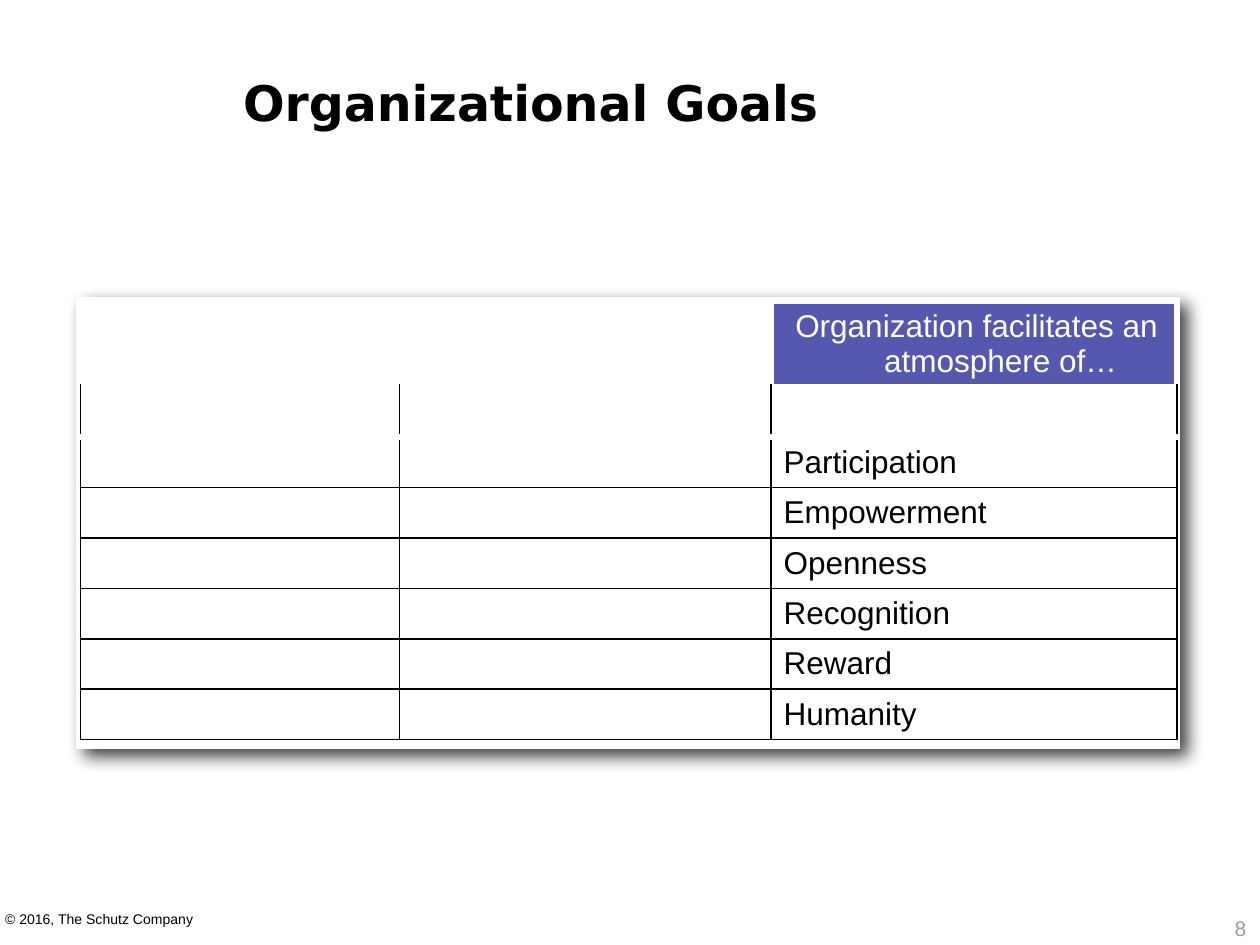
from dataclasses import dataclass

from lxml import etree
from pptx import Presentation
from pptx.dml.color import RGBColor
from pptx.enum.shapes import MSO_SHAPE
from pptx.enum.text import MSO_ANCHOR, MSO_AUTO_SIZE, PP_ALIGN
from pptx.oxml.ns import qn
from pptx.util import Inches, Pt

LEFT, CENTER = PP_ALIGN.LEFT, PP_ALIGN.CENTER
TOP, MIDDLE = MSO_ANCHOR.TOP, MSO_ANCHOR.MIDDLE
NO_AUTOFIT = MSO_AUTO_SIZE.NONE
RECTANGLE = MSO_SHAPE.RECTANGLE
TITLE_ONLY = 5


@dataclass(frozen=True)
class Theme:
    black: str = "000000"
    white: str = "FFFFFF"
    header: str = "5657AE"
    gray: str = "9B9B9B"
    body_font: str = "Arial"
    title_font: str = "DejaVu Sans"
    title_size: int = 28
    table_size: int = 18
    number_size: int = 12
    footer_size: int = 8
    inset: float = 0.06
    indent: float = 0.04
    grid_width: float = 1
    gap_width: float = 4


THEME = Theme()
HEADER = "Organization facilitates an atmosphere of…"
GOALS = ["Participation", "Empowerment", "Openness", "Recognition", "Reward", "Humanity"]
COLUMN_WIDTHS = [2.53, 2.95, 3.22]
HEADER_HEIGHT, ROW_HEIGHT = 0.63, 0.37


def color(value):
    return RGBColor.from_string(value)


def set_indent(para, left, first=0.0):
    properties = para._p.get_or_add_pPr()
    properties.set("marL", str(Inches(left)))
    properties.set("indent", str(Inches(first)))


def style_para(para, size, ink, font=THEME.body_font, align=LEFT, bold=False):
    para.alignment = align
    para.font.name = font
    para.font.size = Pt(size)
    para.font.bold = bold
    para.font.color.rgb = color(ink)


def set_frame(frame, inset, anchor, wrap=True):
    frame.margin_left = frame.margin_right = Inches(inset)
    frame.margin_top = frame.margin_bottom = Inches(inset)
    frame.vertical_anchor = anchor
    frame.word_wrap = wrap
    frame.auto_size = NO_AUTOFIT


def add_title(page, text):
    title = page.shapes.title
    title.left, title.top = Inches(1.83), Inches(0.52)
    title.width, title.height = Inches(8.1), Inches(0.58)
    set_frame(title.text_frame, THEME.inset, MIDDLE)
    para = title.text_frame.paragraphs[0]
    para.text = text
    set_indent(para, THEME.indent)
    style_para(para, THEME.title_size, THEME.black, THEME.title_font, bold=True)


def add_label(page, text, place, inset, anchor, wrap):
    box = page.shapes.add_textbox(*map(Inches, place))
    set_frame(box.text_frame, inset, anchor, wrap)
    para = box.text_frame.paragraphs[0]
    para.text = text
    return para


def add_panel(page):
    panel = page.shapes.add_shape(
        RECTANGLE, Inches(0.61), Inches(2.36), Inches(8.75), Inches(3.58))
    panel.fill.solid()
    panel.fill.fore_color.rgb = color(THEME.white)
    panel.line.color.rgb = color(THEME.white)
    panel.line.width = Pt(0.75)
    panel.shadow.inherit = False
    # Soft shadow towards the lower right
    effects = panel._element.spPr.find(qn("a:effectLst"))
    shadow = etree.SubElement(
        effects, qn("a:outerShdw"), blurRad=str(Pt(10)), dist=str(Pt(6)),
        dir=str(45 * 60000), algn="tl", rotWithShape="0")
    ink = etree.SubElement(shadow, qn("a:srgbClr"), val=THEME.black)
    etree.SubElement(ink, qn("a:alpha"), val="75000")


def set_borders(cell, white_edges):
    properties = cell._tc.get_or_add_tcPr()
    for position, edge in enumerate("LRTB"):
        is_white = edge in white_edges
        width = THEME.gap_width if is_white else THEME.grid_width
        line = etree.Element(qn(f"a:ln{edge}"), w=str(Pt(width)))
        fill = etree.SubElement(line, qn("a:solidFill"))
        etree.SubElement(fill, qn("a:srgbClr"), val=THEME.white if is_white else THEME.black)
        properties.insert(position, line)


def fill_cell(cell, text, is_header, white_edges):
    cell.margin_left = cell.margin_right = Inches(THEME.inset)
    cell.margin_top = cell.margin_bottom = Inches(THEME.inset)
    cell.vertical_anchor = MIDDLE if is_header else TOP
    if is_header and text:
        cell.fill.solid()
        cell.fill.fore_color.rgb = color(THEME.header)
    else:
        cell.fill.background()
    set_borders(cell, white_edges)
    para = cell.text_frame.paragraphs[0]
    if text:
        para.text = text
    set_indent(para, 0.42, -0.38)
    style_para(para, THEME.table_size, THEME.white if is_header else THEME.black,
               align=CENTER if is_header else LEFT)


def add_goal_table(page):
    texts = [HEADER, "", *GOALS]
    # The header and the empty row below it are set off by white rules
    white_edges = {0: "LRTB", 1: "TB", 2: "T"}
    table = page.shapes.add_table(
        len(texts), len(COLUMN_WIDTHS), Inches(0.64), Inches(2.39),
        Inches(sum(COLUMN_WIDTHS)), Inches(HEADER_HEIGHT + ROW_HEIGHT * (len(texts) - 1))).table
    table.first_row = table.horz_banding = False
    for column, width in zip(table.columns, COLUMN_WIDTHS):
        column.width = Inches(width)
    last_column = len(COLUMN_WIDTHS) - 1
    for row, text in enumerate(texts):
        table.rows[row].height = Inches(ROW_HEIGHT if row else HEADER_HEIGHT)
        for column in range(len(COLUMN_WIDTHS)):
            fill_cell(table.cell(row, column), text if column == last_column else "",
                      row == 0, white_edges.get(row, ""))


def main():
    deck = Presentation()
    deck.slide_width, deck.slide_height = Inches(10), Inches(7.5)
    page = deck.slides.add_slide(deck.slide_layouts[TITLE_ONLY])

    # Footer
    footer = add_label(page, "© 2016, The Schutz Company", (0, 7.23, 3.18, 0.13), 0, TOP, True)
    set_indent(footer, THEME.indent)
    style_para(footer, THEME.footer_size, THEME.black)

    # Title and table on its panel
    add_panel(page)
    add_title(page, "Organizational Goals")
    add_goal_table(page)

    # Page number
    number = add_label(page, "8", (9.69, 7.21, 0.31, 0.31), THEME.inset, MIDDLE, False)
    style_para(number, THEME.number_size, THEME.gray, align=CENTER)

    deck.save("out.pptx")


if __name__ == "__main__":
    main()
